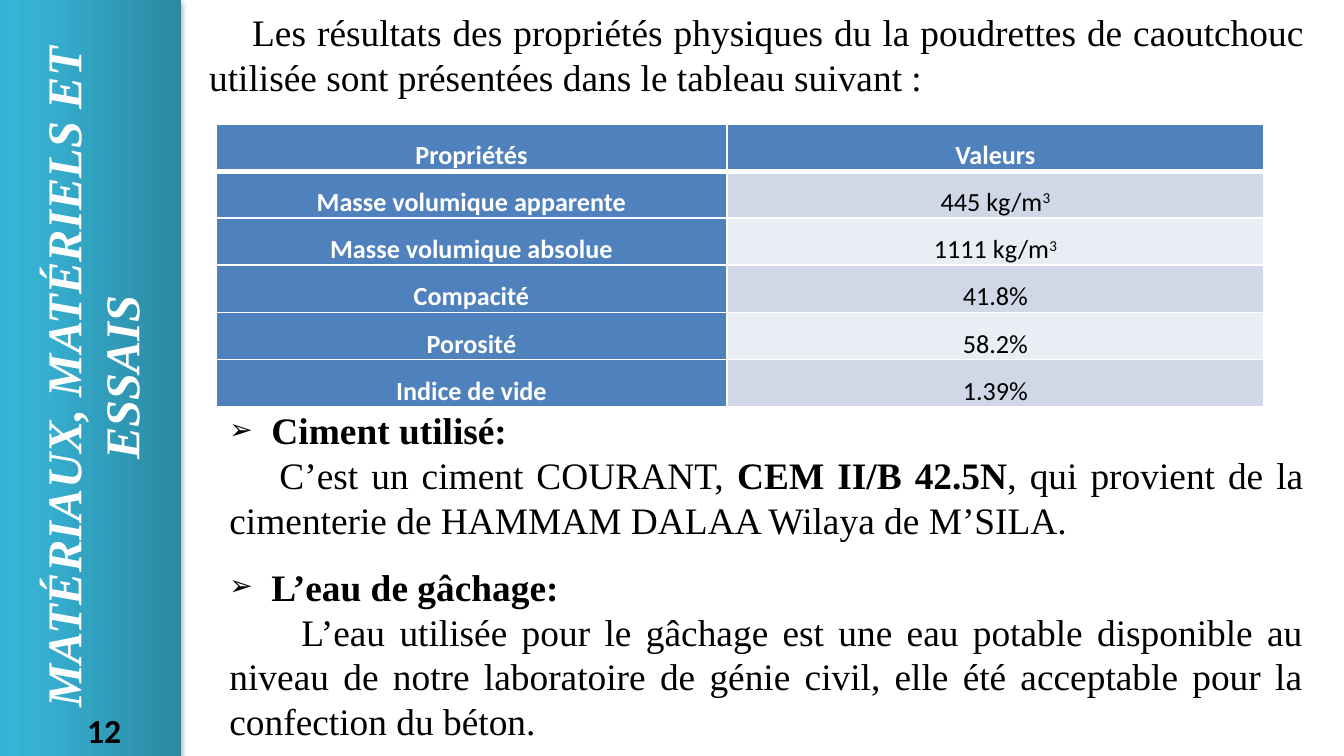
"""Build the slide on rubber powder, cement and mixing water."""
from copy import deepcopy

from lxml import etree
from pptx import Presentation
from pptx.dml.color import RGBColor
from pptx.enum.text import MSO_ANCHOR, MSO_AUTO_SIZE, PP_ALIGN
from pptx.oxml import parse_xml
from pptx.oxml.ns import nsdecls, qn
from pptx.util import Pt

CENTER, JUSTIFY, LEFT = PP_ALIGN.CENTER, PP_ALIGN.JUSTIFY, PP_ALIGN.LEFT
MIDDLE, TOP = MSO_ANCHOR.MIDDLE, MSO_ANCHOR.TOP
FIXED = MSO_AUTO_SIZE.NONE

WHITE = RGBColor(0xFF, 0xFF, 0xFF)
BLACK = RGBColor(0, 0, 0)
BLUE = RGBColor(0x4F, 0x81, 0xBD)
BANDS = RGBColor(0xD0, 0xD8, 0xE8), RGBColor(0xE9, 0xED, 0xF4)
TEALS = (
    (0, RGBColor(0x2A, 0x88, 0xA2)),
    (0.8, RGBColor(0x37, 0xB1, 0xD2)),
    (1, RGBColor(0x34, 0xB4, 0xD6)),
)

SERIF, SANS = "Times New Roman", "Calibri"
ROWS = (
    ("Propriétés", "Valeurs", ""),
    ("Masse volumique apparente", "445 kg/m", "3"),
    ("Masse volumique absolue", "1111 kg/m", "3"),
    ("Compacité", "41.8%", ""),
    ("Porosité", "58.2%", ""),
    ("Indice de vide", "1.39%", ""),
)
INTRO = (
    "Les résultats des propriétés physiques du la poudrettes de caoutchouc "
    "utilisée sont présentées dans le tableau suivant :"
)
CEMENT = (
    ("C’est un ciment COURANT, ", False),
    ("CEM II/B 42.5N", True),
    (", qui provient de la cimenterie de HAMMAM DALAA Wilaya de M’SILA.", False),
)
WATER = ((
    "L’eau utilisée pour le gâchage est une eau potable disponible au niveau "
    "de notre laboratoire de génie civil, elle été acceptable pour la "
    "confection du béton.", False),
)


def px(num):
    """Turn pixels into EMU."""
    return round(num * 914400 / 134.4)


def place(shape, left, top, width, height):
    """Set the bounds of a shape in pixels."""
    shape.left, shape.top = px(left), px(top)
    shape.width, shape.height = px(width), px(height)


def write(par, text, size=20, font=SERIF, color=BLACK, bold=False,
          slant=False, raised=False):
    """Add one formatted run to a paragraph."""
    run = par.add_run()
    run.text = text
    face = run.font
    face.size, face.name = Pt(size), font
    face.bold, face.italic = bold, slant
    face.color.rgb = color
    if raised:
        run._r.get_or_add_rPr().set("baseline", "30000")


def layout(par, align, lines=1.0, gap=0, left=0, first=0):
    """Set alignment, spacing and indents of a paragraph."""
    par.alignment, par.line_spacing = align, lines
    par.space_before = par.space_after = Pt(gap)
    props = par._p.get_or_add_pPr()
    props.set("marL", str(px(left)))
    props.set("indent", str(px(first)))
    return props


def add_box(slide, bounds, wrap):
    """Add a text box and return its first paragraph."""
    box = slide.shapes.add_textbox(0, 0, 0, 0)
    place(box, *bounds)
    box.text_frame.word_wrap = wrap
    return box.text_frame.paragraphs[0]


def add_side(slide):
    """Turn the title into the upright teal band."""
    side = slide.shapes.title
    place(side, -288, 287, 758, 181)
    side.rotation = 270
    fill = side.fill
    fill.gradient()
    fill.gradient_angle = 90
    stops = side._element.spPr.find(".//" + qn("a:gsLst"))
    stops.append(deepcopy(stops[-1]))
    for stop, (spot, color) in zip(fill.gradient_stops, TEALS):
        stop.position, stop.color.rgb = spot, color
    side._element.spPr.append(parse_xml(
        f'<a:effectLst {nsdecls("a")}>'
        '<a:outerShdw blurRad="39370" dist="22860" dir="5400000" rotWithShape="0">'
        '<a:srgbClr val="000000"><a:alpha val="35000"/></a:srgbClr>'
        '</a:outerShdw></a:effectLst>'))
    frame = side.text_frame
    frame.word_wrap, frame.auto_size = True, FIXED
    frame.vertical_anchor = MIDDLE
    par = frame.paragraphs[0]
    layout(par, CENTER)
    write(par, "MATÉRIAUX, MATÉRIELS ET ESSAIS", size=26, color=WHITE,
          bold=True, slant=True)


def edge(cell, **widths):
    """Draw white cell borders, with widths in points by side."""
    props = cell._tc.get_or_add_tcPr()
    for side in "LRTB":
        width = Pt(widths.get(side, 1))
        props.append(parse_xml(
            f'<a:ln{side} {nsdecls("a")} w="{width}"><a:solidFill>'
            f'<a:srgbClr val="{WHITE}"/></a:solidFill></a:ln{side}>'))


def fill_cell(cell, text, power, row, head):
    """Format and fill one table cell."""
    edge(cell, T=3 if row == 1 else 1, B=3 if row == 0 else 1)
    cell.fill.solid()
    cell.fill.fore_color.rgb = BLUE if head else BANDS[(row - 1) % 2]
    cell.margin_left = cell.margin_right = px(9)
    cell.margin_top = cell.margin_bottom = 0
    par = cell.text_frame.paragraphs[0]
    layout(par, CENTER, lines=1.5, gap=12)
    style = dict(size=14, font=SANS, color=WHITE if head else BLACK, bold=head)
    write(par, text, **style)
    if power:
        write(par, power, raised=True, **style)


def add_grid(slide):
    """Add the table of properties."""
    high = 47
    grid = slide.shapes.add_table(
        len(ROWS), 2, px(216), px(124), px(1048), px(high * len(ROWS))).table
    for col, width in zip(grid.columns, (511, 537)):
        col.width = px(width)
    for row, (name, value, power) in enumerate(ROWS):
        grid.rows[row].height = px(high)
        fill_cell(grid.cell(row, 0), name, "", row, True)
        fill_cell(grid.cell(row, 1), value, power, row, row == 0)


def add_topic(frame, par, head, parts, first):
    """Write an arrow heading and the paragraph below it."""
    props = layout(par, LEFT, lines=1.5, left=42, first=-42)
    etree.SubElement(props, qn("a:buSzPct")).set("val", "75000")
    etree.SubElement(props, qn("a:buChar")).set("char", "➢")
    write(par, head, bold=True)
    par = frame.add_paragraph()
    etree.SubElement(layout(par, JUSTIFY, first=first), qn("a:buNone"))
    for text, bold in parts:
        write(par, text, bold=bold)


def add_body(slide):
    """Fill the body with the cement and water topics."""
    body = slide.placeholders[1]
    place(body, 216, 378, 1101, 375)
    frame = body.text_frame
    frame.word_wrap, frame.auto_size = True, FIXED
    frame.vertical_anchor = TOP
    add_topic(frame, frame.paragraphs[0], "Ciment utilisé:", CEMENT, 50)
    add_topic(frame, frame.add_paragraph(), "L’eau de gâchage:", WATER, 72)


def main():
    """Build and save the slide."""
    deck = Presentation()
    deck.slide_width, deck.slide_height = px(1344), px(756)
    slide = deck.slides.add_slide(deck.slide_layouts[1])
    add_side(slide)
    write(add_box(slide, (74, 703, 62, 54), False), "12", size=18, font=SANS,
          bold=True)
    intro = add_box(slide, (196, 3, 1122, 104), True)
    layout(intro, JUSTIFY, first=43)
    write(intro, INTRO)
    add_grid(slide)
    add_body(slide)
    deck.save("out.pptx")


if __name__ == "__main__":
    main()
